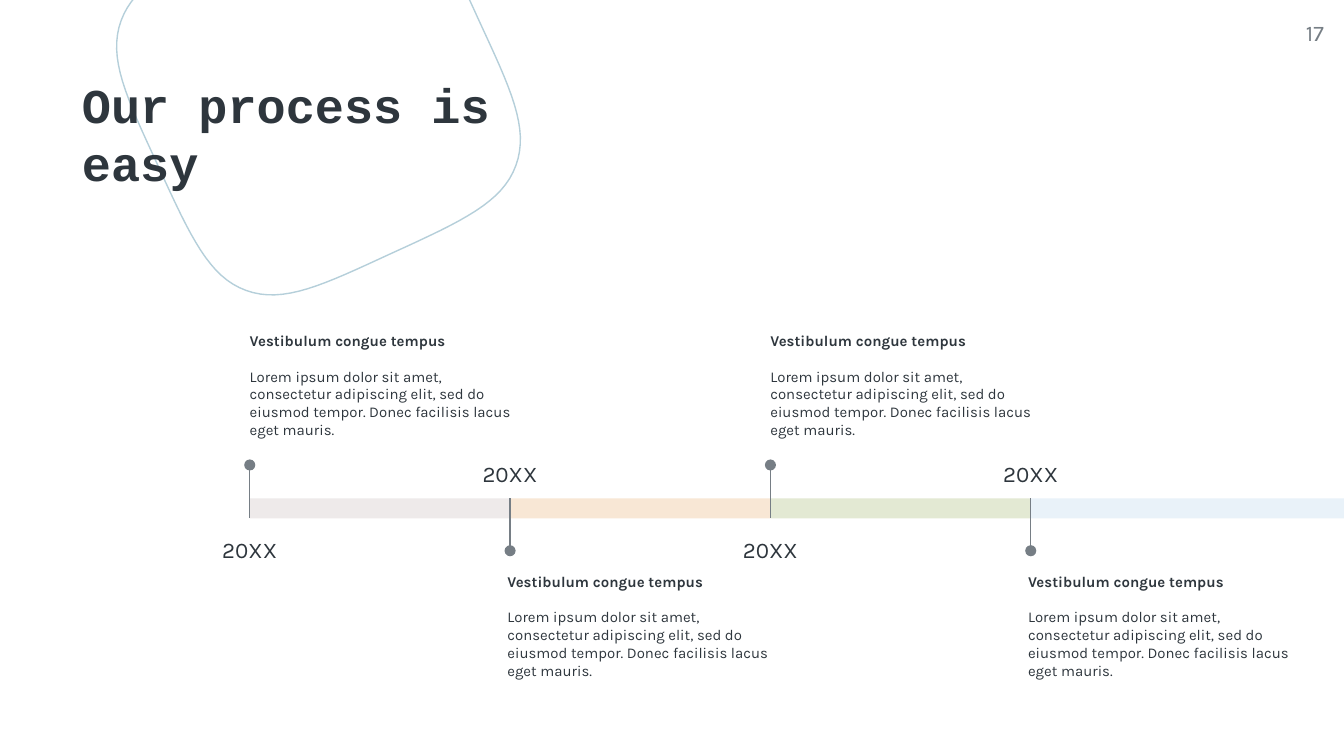
import pptx
import pptx.dml.color
import pptx.enum.shapes
import pptx.enum.text
import pptx.oxml.ns
import pptx.util
from lxml import etree

Cm, Pt = pptx.util.Cm, pptx.util.Pt
RGBColor = pptx.dml.color.RGBColor
Align = pptx.enum.text.PP_ALIGN
qn = pptx.oxml.ns.qn

INK = RGBColor(0x2E, 0x36, 0x3D)
GREY = RGBColor(0x76, 0x7E, 0x85)
BLUE = RGBColor(0xB5, 0xCF, 0xDA)
BANDS = [RGBColor(0xEE, 0xEA, 0xEA), RGBColor(0xF8, 0xE7, 0xD5),
         RGBColor(0xE3, 0xE9, 0xD3), RGBColor(0xE9, 0xF2, 0xF9)]

WIDTH, HEIGHT = 25.4, 14.29
LEFT, STEP = 4.72, 4.92
TOP, THICK = 9.42, 0.38

HEAD = "Vestibulum congue tempus"
BODY = ("Lorem ipsum dolor sit amet, consectetur adipiscing elit, "
        "sed do eiusmod tempor. Donec facilisis lacus eget mauris.")

# One quarter of the pebble, as offsets from its centre: two Bezier curves
CURVES = [
    [(1.4, 3.02), (2.74, 2.41), (3.48, 2.06), (3.73, 1.37)],
    [(3.73, 1.37), (3.99, 0.66), (3.63, -0.08), (3.02, -1.4)],
]


def bezier(curve, t):
    """Return the point at t on a cubic curve."""
    parts = [(1 - t) ** 3, 3 * t * (1 - t) ** 2, 3 * t * t * (1 - t), t ** 3]
    return tuple(sum(w * p[axis] for w, p in zip(parts, curve)) for axis in (0, 1))


class Deck:
    font = "Karla"
    line = Pt(0.75)

    def __init__(self):
        self.show = pptx.Presentation()
        self.show.slide_width, self.show.slide_height = Cm(WIDTH), Cm(HEIGHT)
        self.slide = self.show.slides.add_slide(self.show.slide_layouts[6])
        self.shapes = self.slide.shapes

    def text(self, x, y, w, h, lines, size, color=INK, font=None, bold=False,
             align=Align.LEFT, inset=0.0):
        """Add a text box; only its first line can be bold."""
        frame = self.shapes.add_textbox(Cm(x), Cm(y), Cm(w), Cm(h)).text_frame
        frame.word_wrap = True
        frame.margin_left = frame.margin_right = Cm(inset)
        frame.margin_top = frame.margin_bottom = Cm(inset)
        frame.text = "\n".join(lines)
        for i, para in enumerate(frame.paragraphs):
            para.alignment = align
            for run in para.runs:
                run.font.size = Pt(size)
                run.font.name = font or self.font
                run.font.color.rgb = color
                run.font.bold = bold and i == 0
        return frame.paragraphs

    def band(self, x, w, color):
        kind = pptx.enum.shapes.MSO_SHAPE.RECTANGLE
        shape = self.shapes.add_shape(kind, Cm(x), Cm(TOP), Cm(w), Cm(THICK))
        shape.shadow.inherit = False
        shape.fill.solid()
        shape.fill.fore_color.rgb = color
        shape.line.fill.background()

    def pin(self, x, start, end):
        """Add an upright line with a dot at its start."""
        kind = pptx.enum.shapes.MSO_CONNECTOR.STRAIGHT
        pin = self.shapes.add_connector(kind, Cm(x), Cm(start), Cm(x), Cm(end))
        pin.line.color.rgb = GREY
        pin.line.width = self.line
        props = pin.element.spPr
        etree.SubElement(props.find(qn("a:ln")), qn("a:headEnd"), type="oval")
        etree.SubElement(props, qn("a:effectLst"))

    def pebble(self, x, y, steps=16):
        """Add the outline made of four quarter turns of CURVES."""
        spots = [bezier(curve, i / steps) for curve in CURVES for i in range(steps)]
        ring = []
        for _ in range(4):
            ring += spots
            spots = [(b, -a) for a, b in spots]
        ring = [(Cm(x + a), Cm(y + b)) for a, b in ring]
        pen = self.shapes.build_freeform(*ring[0])
        pen.add_line_segments(ring[1:], close=True)
        shape = pen.convert_to_shape()
        shape.shadow.inherit = False
        shape.fill.background()
        shape.line.color.rgb = BLUE
        shape.line.width = self.line

    def year(self, x, y):
        para = self.text(x - 0.95, y, 1.9, 1.04, ["20XX"], 12,
                         align=Align.CENTER, inset=0.25)[0]
        para.line_spacing = 1.15
        para.space_after = Pt(16)

    def note(self, x, y):
        head, body = self.text(x, y, 5.66, 2.62, [HEAD, BODY], 8,
                               bold=True, inset=0.25)
        head.space_after = Pt(9.4)
        body.space_after = Pt(16)


def main():
    deck = Deck()
    deck.pebble(6.02, 1.76)
    deck.text(1.55, 1.42, 7.85, 1.27, ["Our process is easy"], 26,
              font="Courier New", bold=True)
    deck.text(23.5, 0.36, 1.52, 1.09, ["17"], 12, GREY, align=Align.RIGHT)

    for i, color in enumerate(BANDS):
        x = LEFT + i * STEP
        last = i == len(BANDS) - 1
        deck.band(x, WIDTH - x if last else STEP, color)
        if i % 2 == 0:
            deck.pin(x, 8.79, TOP + THICK)
            deck.year(x, 9.8)
            deck.note(x - 0.25, 6.02)
        else:
            deck.pin(x, 10.41, TOP)
            deck.year(x, 8.38)
            deck.note(x - 0.3, 10.57)

    deck.show.save("out.pptx")


if __name__ == "__main__":
    main()
